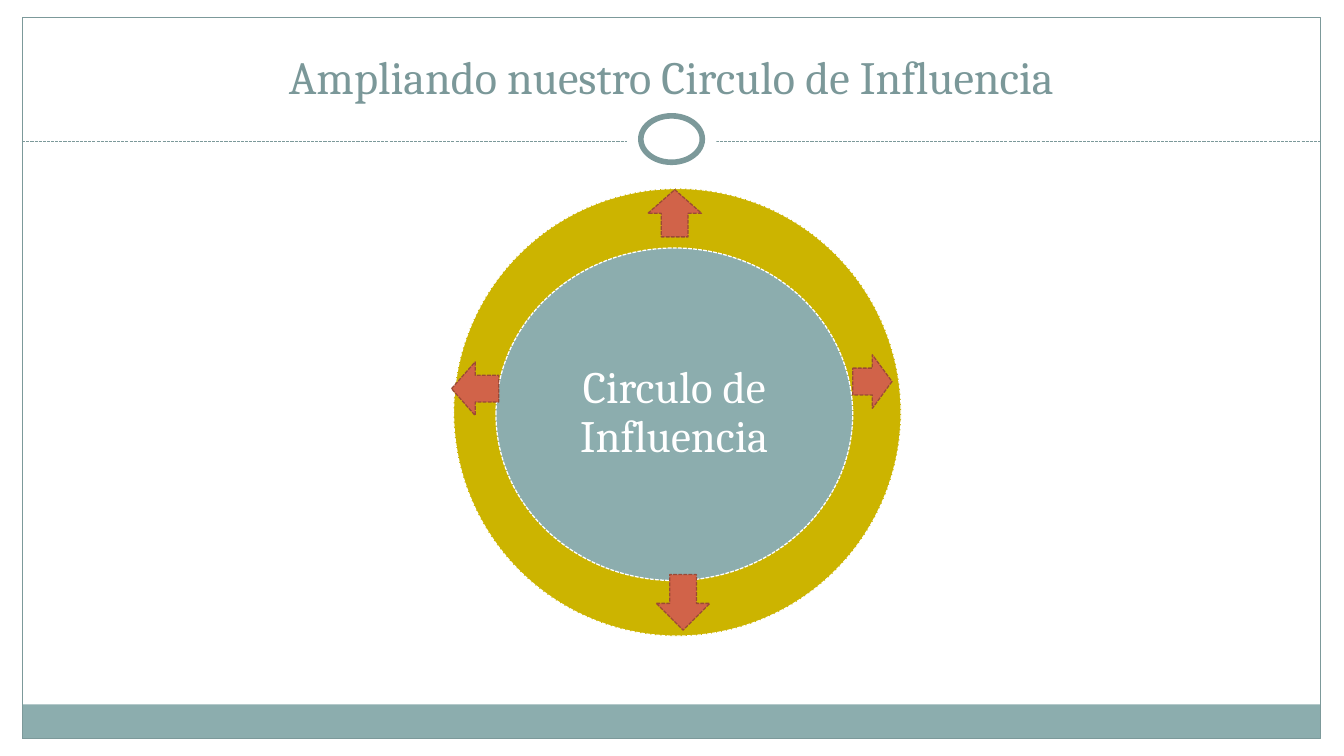
from dataclasses import dataclass
from typing import Optional

from lxml.etree import SubElement
from pptx import Presentation
from pptx.dml.color import RGBColor as Rgb
from pptx.enum.dml import MSO_LINE as Dash
from pptx.enum.shapes import MSO_CONNECTOR as Link, MSO_SHAPE as Kind
from pptx.enum.text import MSO_ANCHOR as Anchor, MSO_AUTO_SIZE as Fit, PP_ALIGN as Align
from pptx.oxml.ns import qn
from pptx.util import Cm, Pt

HUES = {
    "white": "FFFFFF",
    "teal": "8CADAE",
    "edge": "7C999A",
    "title": "7B9899",
    "gold": "CCB400",
    "red": "D16349",
    "rust": "9B4936",
}


@dataclass
class Item:
    kind: Kind
    box: tuple[float, float, float, float]
    fill: Optional[str] = None
    line: Optional[str] = None
    width: float = 0.9
    dash: Optional[Dash] = None


def arrow(kind: Kind, *box: float) -> Item:
    return Item(kind, box, "red", "rust", dash=Dash.SQUARE_DOT)


FRAME = [
    Item(Kind.RECTANGLE, (0.56, 17.75, 32.72, 0.87), "teal"),
    Item(Kind.RECTANGLE, (0.56, 0.43, 32.72, 18.19), None, "edge", 0.75),
]
RINGS = [
    Item(Kind.OVAL, (15.8, 2.67, 2.26, 1.7), "white"),
    Item(Kind.OVAL, (16.15, 2.92, 1.55, 1.17), "white", "edge", 4),
]
DISCS = [
    Item(Kind.OVAL, (11.43, 4.75, 11.28, 11.28), "gold", "white", dash=Dash.SQUARE_DOT),
    Item(Kind.OVAL, (12.5, 6.25, 8.99, 8.38), "teal", "white", dash=Dash.SQUARE_DOT),
]
ARROWS = [
    arrow(Kind.RIGHT_ARROW, 21.49, 8.94, 0.99, 1.35),
    arrow(Kind.UP_ARROW, 16.33, 4.78, 1.35, 1.19),
    arrow(Kind.LEFT_ARROW, 11.38, 9.12, 1.19, 1.35),
    arrow(Kind.DOWN_ARROW, 16.54, 14.48, 1.35, 1.4),
]


def hue(name: str) -> Rgb:
    return Rgb.from_string(HUES[name])


def apply(target, style: dict) -> None:
    for name, value in style.items():
        setattr(target, name, value)


def stroke(line, name: str, width: float, dash: Optional[Dash]) -> None:
    line.color.rgb = hue(name)
    apply(line, {"width": Pt(width), "dash_style": dash})


def draw(slide, item: Item) -> None:
    shape = slide.shapes.add_shape(item.kind, *map(Cm, item.box))
    shape.shadow.inherit = False
    if item.fill:
        shape.fill.solid()
        shape.fill.fore_color.rgb = hue(item.fill)
    else:
        shape.fill.background()
    if item.line:
        stroke(shape.line, item.line, item.width, item.dash)
    else:
        shape.line.fill.background()


def rule(slide, left: float, right: float, top: float) -> None:
    line = slide.shapes.add_connector(Link.STRAIGHT, Cm(left), Cm(top), Cm(right), Cm(top))
    stroke(line.line, "edge", 0.75, Dash.SQUARE_DOT)
    SubElement(line._element.spPr, qn("a:effectLst"))


def write(frame, text: str, size: float, color: str, anchor: Anchor, gap: float) -> None:
    frame.text = text
    apply(frame, {"word_wrap": True, "auto_size": Fit.NONE, "vertical_anchor": anchor})
    para = frame.paragraphs[0]
    apply(para, {"alignment": Align.CENTER, "line_spacing": gap})
    font = para.runs[0].font
    apply(font, {"name": "Cambria", "size": Pt(size)})
    font.color.rgb = hue(color)


def main() -> None:
    deck = Presentation()
    apply(deck, {"slide_width": Cm(33.87), "slide_height": Cm(19.05)})
    slide = deck.slides.add_slide(deck.slide_layouts[5])

    for item in FRAME:
        draw(slide, item)
    rule(slide, 0.56, 33.28, 3.56)
    for item in RINGS:
        draw(slide, item)

    title = slide.shapes.title
    apply(title, {"left": Cm(1.12), "top": Cm(0.64), "width": Cm(31.6), "height": Cm(2.11)})
    write(title.text_frame, "Ampliando nuestro Circulo de Influencia", 33, "title", Anchor.BOTTOM, 1.0)

    for item in DISCS:
        draw(slide, item)
    label = slide.shapes.add_textbox(Cm(13.82), Cm(8.33), Cm(6.35), Cm(4.19)).text_frame
    sides = ("left", "top", "right", "bottom")
    apply(label, {f"margin_{side}": Cm(0.64) for side in sides})
    write(label, "Circulo de Influencia", 32, "white", Anchor.MIDDLE, 0.9)
    for item in ARROWS:
        draw(slide, item)

    deck.save("out.pptx")


if __name__ == "__main__":
    main()
